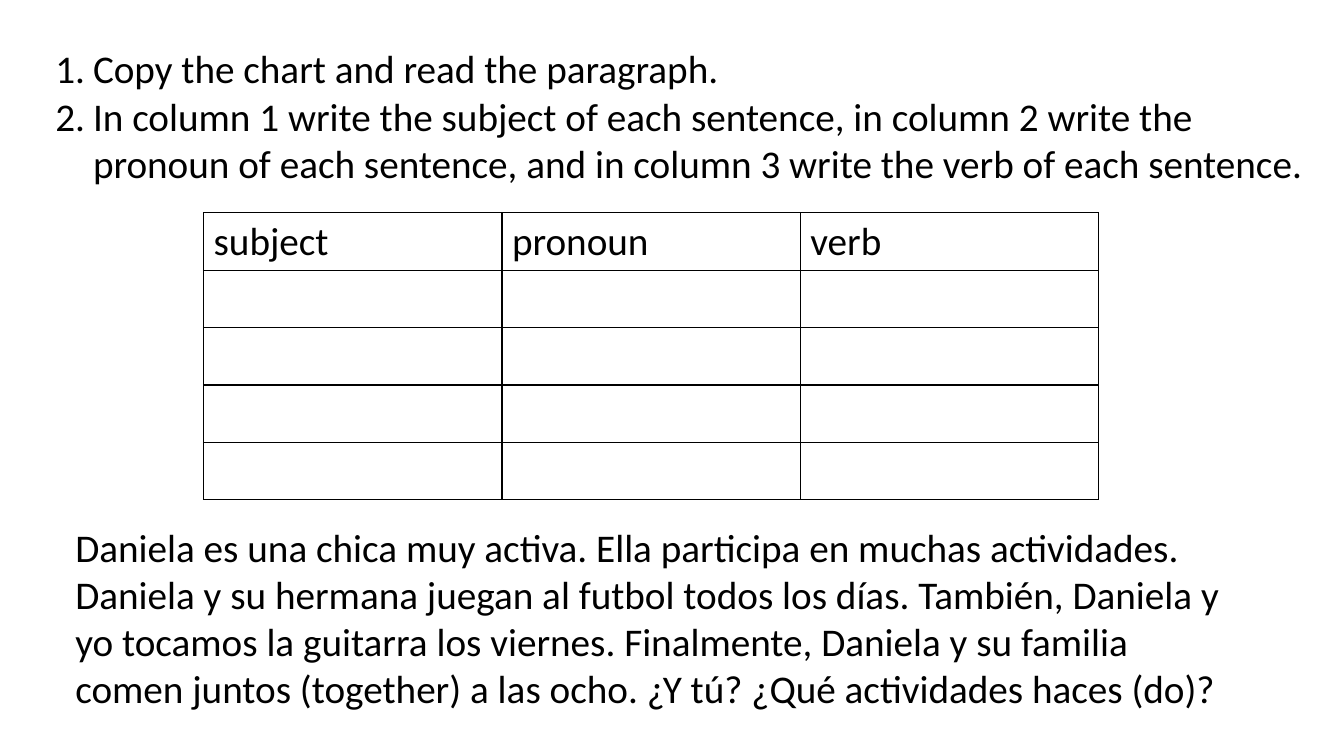
from dataclasses import dataclass

import pptx
import pptx.dml.color
import pptx.enum.text
import pptx.oxml
import pptx.oxml.ns
import pptx.util
from pptx.util import Cm


@dataclass(frozen=True)
class Theme:
    font: str = "Calibri"
    size: int = 28
    ink: str = "000000"
    paper: str = "FFFFFF"
    border: int = 1


THEME = Theme()

INSTRUCTIONS = [
    "Copy the chart and read the paragraph.",
    "In column 1 write the subject of each sentence, in column 2 write the "
    "pronoun of each sentence, and in column 3 write the verb of each sentence.",
]
HEADINGS = ["subject", "pronoun", "verb"]
BLANK_ROWS = 4
STORY = (
    "Daniela es una chica muy activa. Ella participa en muchas actividades. "
    "Daniela y su hermana juegan al futbol todos los días. También, Daniela y "
    "yo tocamos la guitarra los viernes. Finalmente, Daniela y su familia "
    "comen juntos (together) a las ocho. ¿Y tú? ¿Qué actividades haces (do)?"
)


def rgb(colour):
    return pptx.dml.color.RGBColor.from_string(colour)


def xml(tag, attributes="", content=""):
    return pptx.oxml.parse_xml(
        f'<a:{tag} {pptx.oxml.ns.nsdecls("a")} {attributes}>{content}</a:{tag}>')


def format_text(frame):
    for paragraph in frame.paragraphs:
        for run in paragraph.runs:
            run.font.name = THEME.font
            run.font.size = pptx.util.Pt(THEME.size)
            run.font.color.rgb = rgb(THEME.ink)


def fill_numbered_list(body, items, left, top, width, height):
    body.left, body.top, body.width, body.height = left, top, width, height
    frame = body.text_frame
    frame.text = "\n".join(items)
    frame.auto_size = pptx.enum.text.MSO_AUTO_SIZE.NONE
    indent = Cm(0.95)
    for paragraph in frame.paragraphs:
        paragraph.space_before = pptx.util.Pt(0)
        properties = paragraph._p.get_or_add_pPr()
        properties.set("marL", str(indent))
        properties.set("indent", str(-indent))
        properties.append(xml("buFont", f'typeface="{THEME.font}"'))
        properties.append(xml("buAutoNum", 'type="arabicPeriod"'))
    format_text(frame)


def outline_cell(cell):
    properties = cell._tc.get_or_add_tcPr()
    line = f'<a:solidFill><a:srgbClr val="{THEME.ink}"/></a:solidFill>'
    for side in ("lnL", "lnR", "lnT", "lnB"):
        properties.append(xml(side, f'w="{pptx.util.Pt(THEME.border)}"', line))


def add_answer_table(slide, headings, blank_rows, left, top, column_width, row_height):
    rows, columns = blank_rows + 1, len(headings)
    answers = slide.shapes.add_table(
        rows, columns, left, top, column_width * columns, row_height * rows).table
    answers.first_row = answers.horz_banding = False
    for cell in answers.iter_cells():
        outline_cell(cell)
        cell.fill.solid()
        cell.fill.fore_color.rgb = rgb(THEME.paper)
    for column, heading in enumerate(headings):
        cell = answers.cell(0, column)
        cell.text_frame.text = heading
        format_text(cell.text_frame)


def add_paragraph_box(slide, text, left, top, width, height):
    frame = slide.shapes.add_textbox(left, top, width, height).text_frame
    frame.word_wrap = True
    frame.text = text
    format_text(frame)


def main():
    presentation = pptx.Presentation()
    presentation.slide_width, presentation.slide_height = Cm(33.87), Cm(19.05)
    slide = presentation.slides.add_slide(presentation.slide_layouts[1])

    # The slide has no title
    title = slide.shapes.title
    title._element.getparent().remove(title._element)

    # Instructions
    fill_numbered_list(slide.placeholders[1], INSTRUCTIONS,
                       Cm(1.14), Cm(1), Cm(32.11), Cm(4.2))

    # Chart for the answers
    add_answer_table(slide, HEADINGS, BLANK_ROWS,
                     Cm(5.13), Cm(5.36), Cm(7.52), Cm(1.44))

    # Reading paragraph
    add_paragraph_box(slide, STORY, Cm(1.65), Cm(13.06), Cm(29.51), Cm(5.05))

    presentation.save("out.pptx")


if __name__ == "__main__":
    main()
